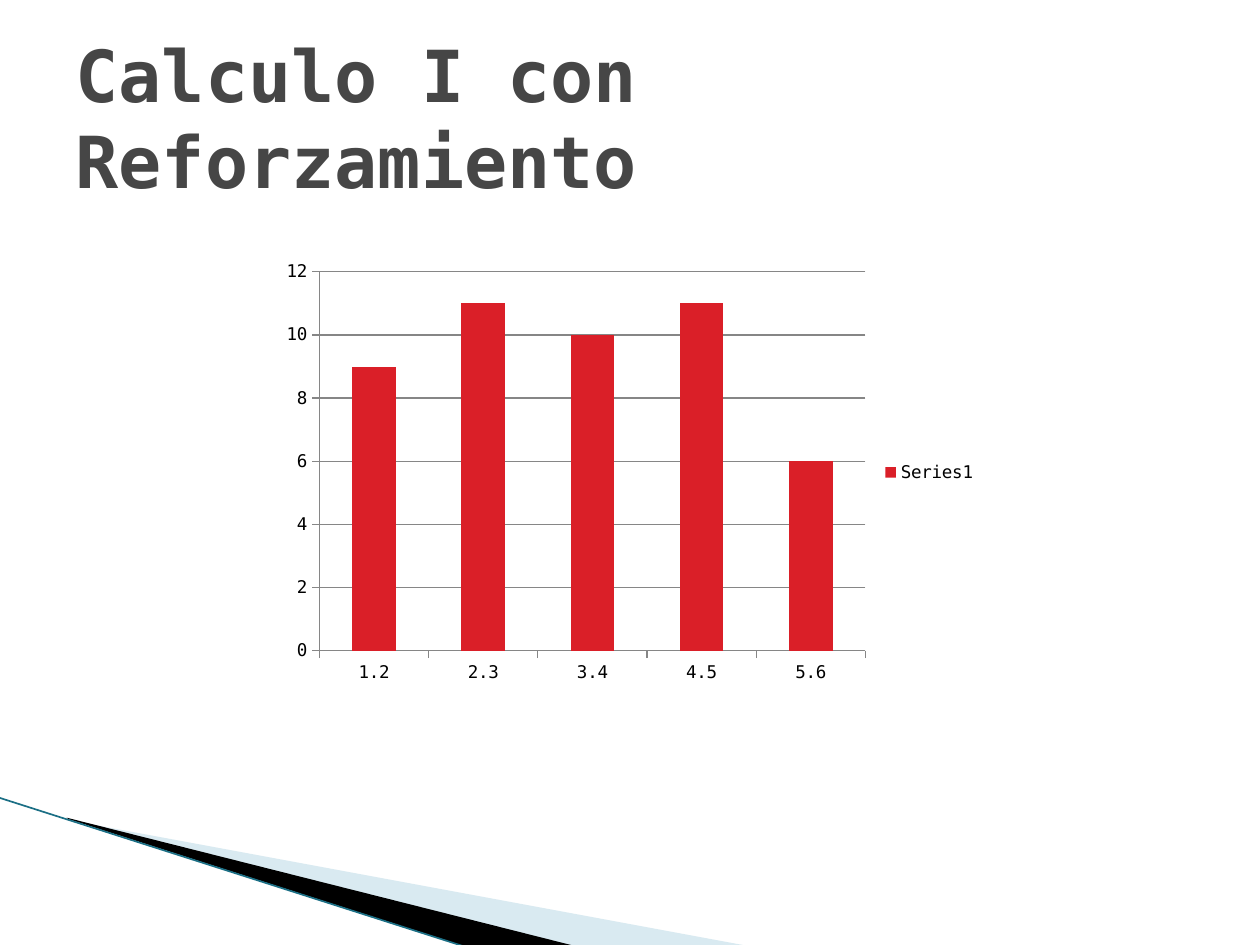
from lxml.etree import SubElement
from pptx import Presentation
from pptx.chart.data import CategoryChartData
from pptx.dml.color import RGBColor
from pptx.enum.chart import XL_CHART_TYPE as ChartType, XL_LEGEND_POSITION as LegendPosition
from pptx.enum.chart import XL_TICK_MARK as TickMark
from pptx.enum.shapes import MSO_CONNECTOR as Connector
from pptx.enum.text import MSO_ANCHOR as Anchor, MSO_AUTO_SIZE as AutoSize, PP_ALIGN as Align
from pptx.oxml.ns import qn
from pptx.util import Inches, Pt

# Content
FONT = "DejaVu Sans Mono"
HEADING = "Calculo I con Reforzamiento"
CATEGORIES = ["1.2", "2.3", "3.4", "4.5", "5.6"]
SERIES = ("Series1", [9, 11, 10, 11, 6])
WEDGES = [  # outline, fill, opacity in percent
    ([(0.55, 6.51), (5.95, 7.51), (4.56, 7.51), (0.55, 6.5)], "A0CBDC", 40),
    ([(0.53, 6.49), (4.57, 7.51), (3.72, 7.52), (0.54, 6.5)], "000000", 100),
]
EDGE = (-0.01, 6.33, 3.71, 7.52)


def color(hex_code):
    return RGBColor.from_string(hex_code)


def inches(values):
    return [Inches(value) for value in values]


def add_wedge(slide, outline, fill, opacity):
    points = [inches(point) for point in outline]
    builder = slide.shapes.build_freeform(*points[0])
    builder.add_line_segments(points[1:], close=True)
    wedge = builder.convert_to_shape()
    wedge.shadow.inherit = False
    wedge.fill.solid()
    wedge.fill.fore_color.rgb = color(fill)
    wedge.line.fill.background()
    if opacity < 100:
        tint = wedge.fill._xPr.find(".//" + qn("a:srgbClr"))
        SubElement(tint, qn("a:alpha"), val=str(opacity * 1000))


def add_edge(slide):
    edge = slide.shapes.add_connector(Connector.STRAIGHT, *inches(EDGE))
    edge.line.color.rgb = color("1B6F85")
    edge.line.width = Pt(0.95)
    SubElement(edge._element.spPr, qn("a:effectLst"))


def fill_heading(heading):
    heading.left, heading.top, heading.width, heading.height = inches((0.5, 0.3, 9, 1.25))
    frame = heading.text_frame
    frame.word_wrap = True
    frame.auto_size = AutoSize.NONE
    frame.vertical_anchor = Anchor.MIDDLE
    paragraph = frame.paragraphs[0]
    paragraph.alignment = Align.LEFT
    run = paragraph.add_run()
    run.text = HEADING
    run.font.name = FONT
    run.font.size = Pt(41)
    run.font.bold = True
    run.font.color.rgb = color("464646")


def add_results(slide):
    data = CategoryChartData()
    data.categories = CATEGORIES
    data.add_series(*SERIES)
    results = slide.shapes.add_chart(
        ChartType.COLUMN_CLUSTERED, *inches((2.16, 2.01, 5.69, 3.48)), data).chart
    results.has_title = False
    results.font.name = FONT
    results.font.size = Pt(10)
    results.font.color.rgb = color("000000")
    results.has_legend = True
    results.legend.position = LegendPosition.RIGHT
    results.legend.include_in_layout = False

    # Axes and gridlines
    scale = results.value_axis
    scale.minimum_scale, scale.maximum_scale, scale.major_unit = 0, 12, 2
    scale.has_major_gridlines = True
    for axis in (results.category_axis, scale):
        axis.major_tick_mark = TickMark.OUTSIDE
    for line in (results.category_axis.format.line, scale.format.line,
                 scale.major_gridlines.format.line):
        line.color.rgb = color("868686")
        line.width = Pt(0.75)

    # Columns
    plot = results.plots[0]
    plot.gap_width = 150
    plot.vary_by_categories = False
    columns = plot.series[0]
    columns.invert_if_negative = False
    columns.format.fill.solid()
    columns.format.fill.fore_color.rgb = color("DA1F28")


def main():
    deck = Presentation()
    deck.slide_width, deck.slide_height = inches((10, 7.5))
    slide = deck.slides.add_slide(deck.slide_layouts[5])
    for wedge in WEDGES:
        add_wedge(slide, *wedge)
    add_edge(slide)
    fill_heading(slide.shapes.title)
    add_results(slide)
    deck.save("out.pptx")


if __name__ == "__main__":
    main()
